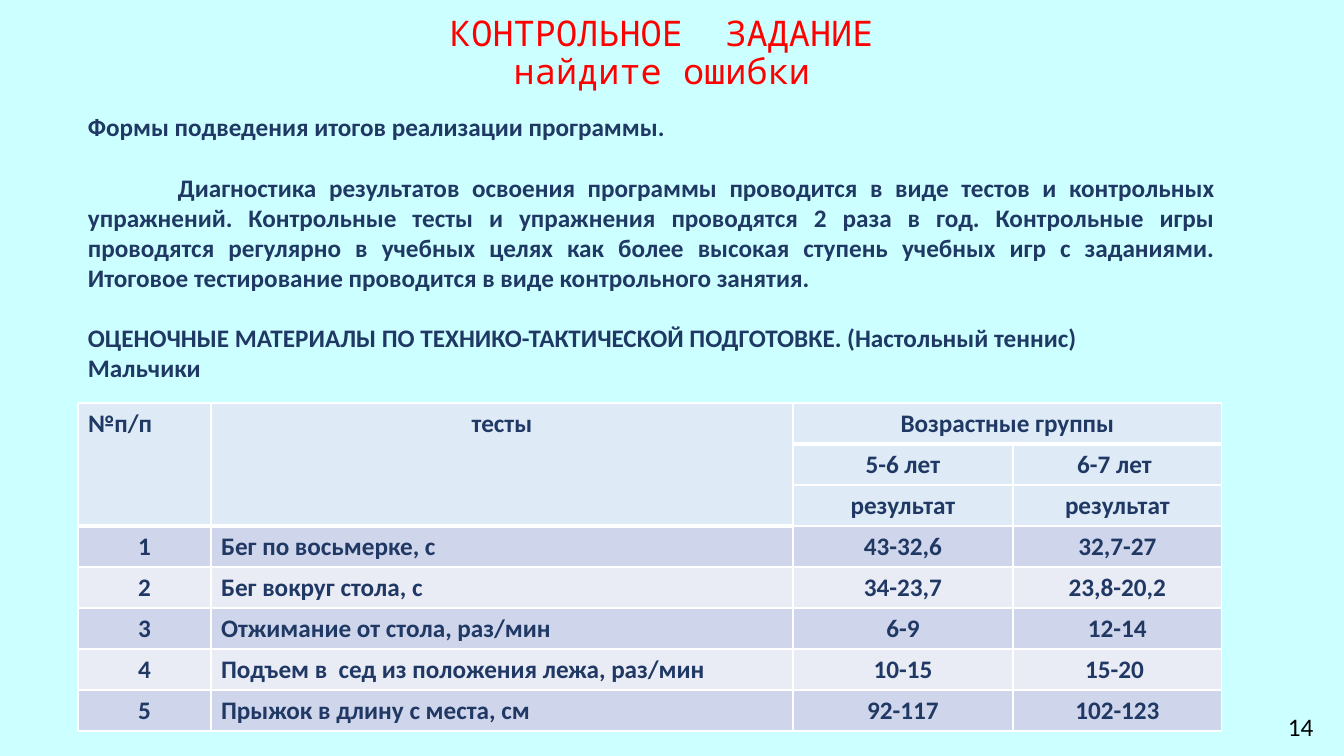
from dataclasses import dataclass

from lxml import etree
from pptx import Presentation
from pptx.dml.color import RGBColor
from pptx.enum.text import MSO_ANCHOR, PP_ALIGN
from pptx.oxml.ns import qn
from pptx.util import Emu, Pt

LEFT, CENTER, JUSTIFY = PP_ALIGN.LEFT, PP_ALIGN.CENTER, PP_ALIGN.JUSTIFY
MIDDLE = MSO_ANCHOR.MIDDLE
EMU_PER_PX = 914400 / 100.8


@dataclass(frozen=True)
class Theme:
    background: str = "CCFFFF"
    title: str = "FF0000"
    text: str = "203864"
    number: str = "000000"
    border: str = "FFFFFF"
    header: str = "DEEBF7"
    bands: tuple = ("CFD5EA", "E9EBF5")
    title_font: str = "Noto Sans Mono"
    body_font: str = "Calibri"
    title_size: float = 25.2
    body_size: int = 18
    thin: int = 1
    thick: int = 3


THEME = Theme()

INTRO = "Формы подведения итогов реализации программы."
DIAGNOSTICS = (
    "Диагностика результатов освоения программы проводится в виде тестов и "
    "контрольных упражнений. Контрольные тесты и упражнения проводятся 2 раза "
    "в год. Контрольные игры проводятся регулярно в учебных целях как более "
    "высокая ступень учебных игр с заданиями. Итоговое тестирование проводится "
    "в виде контрольного занятия."
)
MATERIALS = (
    "ОЦЕНОЧНЫЕ МАТЕРИАЛЫ ПО ТЕХНИКО-ТАКТИЧЕСКОЙ ПОДГОТОВКЕ. (Настольный теннис)",
    "Мальчики",
)
HEADER = [
    ("№п/п", "тесты", "Возрастные группы", ""),
    ("", "", "5-6 лет", "6-7 лет "),
    ("", "", "результат", "результат"),
]
RESULTS = [
    ("1", "Бег по восьмерке, с", "43-32,6", "32,7-27"),
    ("2", "Бег вокруг стола, с", "34-23,7", "23,8-20,2"),
    ("3", "Отжимание от стола, раз/мин", "6-9", "12-14"),
    ("4", "Подъем в  сед из положения лежа, раз/мин", "10-15", "15-20 "),
    ("5", "Прыжок в длину с места, см", "92-117", "102-123"),
]
COLUMN_WIDTHS = (133, 582, 220, 209)
ROW_HEIGHT = 41


def px(n):
    return Emu(round(n * EMU_PER_PX))


def add_run(p, text, color=THEME.text, font=THEME.body_font,
            size=THEME.body_size, bold=True):
    r = p.add_run()
    r.text = text
    r.font.name, r.font.size, r.font.bold = font, Pt(size), bold
    r.font.color.rgb = RGBColor.from_string(color)


def add_text_frame(s, box, wrap=True):
    tf = s.shapes.add_textbox(*map(px, box)).text_frame
    tf.word_wrap = wrap
    return tf


def add_title(s, box):
    tf = add_text_frame(s, box)
    tf.vertical_anchor = MIDDLE
    tf.margin_top, tf.margin_bottom = px(37), 0
    p = tf.paragraphs[0]
    p.alignment, p.line_spacing = CENTER, 0.9
    for i, line in enumerate(("КОНТРОЛЬНОЕ  ЗАДАНИЕ ", "найдите ошибки ")):
        if i:
            p.add_line_break()
        add_run(p, line, THEME.title, THEME.title_font, THEME.title_size, False)


def add_intro(s, box):
    tf = add_text_frame(s, box)
    add_run(tf.paragraphs[0], INTRO)
    p = tf.add_paragraph()
    p.alignment, p.space_before = JUSTIFY, Pt(22)
    p._p.get_or_add_pPr().set("indent", str(px(90)))
    add_run(p, DIAGNOSTICS)


def add_materials_heading(s, box):
    tf = add_text_frame(s, box)
    for i, line in enumerate(MATERIALS):
        add_run(tf.add_paragraph() if i else tf.paragraphs[0], line)


def add_borders(cell, sides):
    """Draw cell borders; sides maps a side letter (L, R, T, B) to points."""
    tc_pr = cell._tc.get_or_add_tcPr()
    for side, weight in sides.items():
        ln = etree.SubElement(tc_pr, qn("a:ln" + side), w=str(Pt(weight)))
        fill = etree.SubElement(ln, qn("a:solidFill"))
        etree.SubElement(fill, qn("a:srgbClr"), val=THEME.border)


def add_results_table(s, box):
    rows = HEADER + RESULTS
    last_header = len(HEADER) - 1
    table = s.shapes.add_table(len(rows), len(COLUMN_WIDTHS), *map(px, box)).table
    for column, width in zip(table.columns, COLUMN_WIDTHS):
        column.width = px(width)
    for row in table.rows:
        row.height = px(ROW_HEIGHT)
    for c in (0, 1):
        table.cell(0, c).merge(table.cell(last_header, c))
    table.cell(0, 2).merge(table.cell(0, 3))

    for i, row in enumerate(rows):
        is_header = i <= last_header
        band = THEME.bands[(i - len(HEADER)) % 2]
        for c, text in enumerate(row):
            cell = table.cell(i, c)
            thick = i == 0 or (i == last_header and c < 2)
            sides = {"L": THEME.thin, "R": THEME.thin}
            if i == 0:
                sides["T"] = THEME.thin
            sides["B"] = THEME.thick if thick else THEME.thin
            add_borders(cell, sides)
            cell.fill.solid()
            cell.fill.fore_color.rgb = RGBColor.from_string(
                THEME.header if is_header else band)
            if text:
                p = cell.text_frame.paragraphs[0]
                left_column = 0 if is_header else 1
                p.alignment = LEFT if c == left_column else CENTER
                add_run(p, text)


def add_slide_number(s, box):
    tf = add_text_frame(s, box, wrap=False)
    add_run(tf.paragraphs[0], "14", THEME.number, bold=False)


def build_control_task(prs):
    s = prs.slides.add_slide(prs.slide_layouts[6])
    s.background.fill.solid()
    s.background.fill.fore_color.rgb = RGBColor.from_string(THEME.background)
    left = 78
    add_title(s, (93, 0, 1159, 71))
    add_results_table(
        s, (left, 403, sum(COLUMN_WIDTHS), ROW_HEIGHT * len(HEADER + RESULTS)))
    add_materials_heading(s, (left, 317, 1073, 71))
    add_slide_number(s, (1278, 706, 46, 40))
    add_intro(s, (left, 106, 1147, 193))


def main():
    prs = Presentation()
    prs.slide_width, prs.slide_height = px(1344), px(756)
    build_control_task(prs)
    prs.save("out.pptx")


if __name__ == "__main__":
    main()
